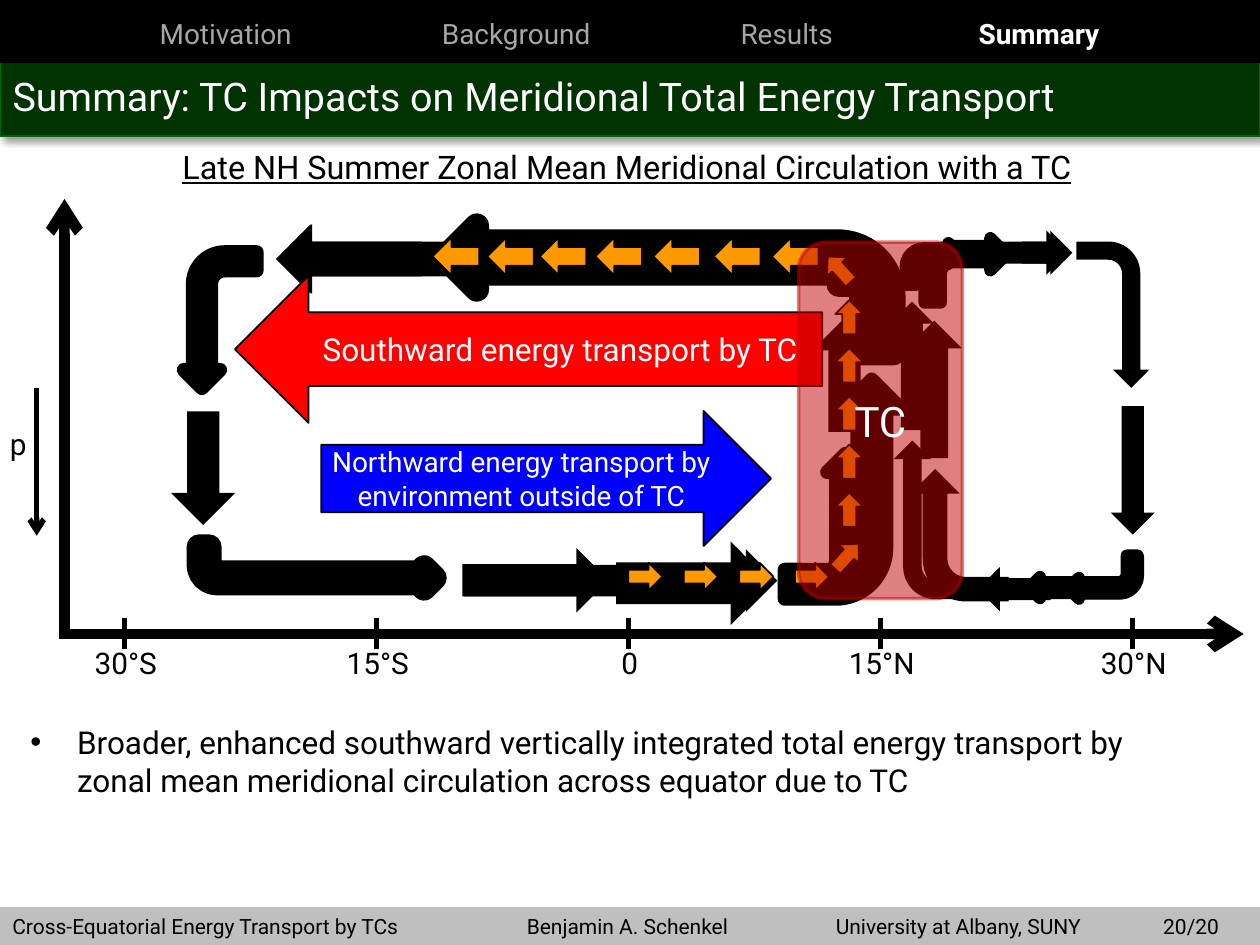
from lxml.etree import SubElement
from pptx import Presentation
from pptx.dml.color import RGBColor
from pptx.enum.shapes import MSO_CONNECTOR as Link, MSO_SHAPE as Geo
from pptx.enum.text import MSO_ANCHOR as Anchor, MSO_AUTO_SIZE as Fit, PP_ALIGN as Align
from pptx.oxml.ns import qn
from pptx.util import Cm, Pt

COLORS = {
    "black": "000000", "white": "FFFFFF", "muted": "A6A6A6", "banner": "003300",
    "banner_edge": "006600", "footer": "BFBFBF", "flux": "FF9900",
    "north": "0000FF", "south": "FF0000", "cyclone": "C00000",
}

# left, top, width, height, rotation, mirrored, outline
BENDS = [
    (17.17, 9.73, 3.2, 1.5, 270, False, 0),
    (18.26, 4.9, 1.07, 0.84, 0, False, 7),
    (20.96, 5.61, 2.95, 1.47, 90, False, 0),
    (21.54, 11.23, 1.4, 0.84, 180, False, 7),
    (15.29, 9.8, 2.77, 1.47, 90, True, 8),
    (4.01, 11.02, 4.75, 0.84, 180, True, 14),
    (10.9, 4.98, 6.2, 0.76, 0, True, 14),
    (3.07, 5.72, 2.74, 1.47, 270, True, 8),
    (14.78, 8.69, 4.42, 2.34, 90, True, 8),
    (8.97, 4.55, 9.04, 2.57, 0, True, 14),
    (18.01, 9.8, 2.67, 1.98, 270, False, 0),
    (18.64, 4.8, 1.65, 1.3, 0, False, 7),
    (20.75, 11.2, 2.18, 0.86, 180, False, 7),
]
STRAIGHTS = [
    (5.59, 4.52, 4.7, 1.4, 180), (9.35, 11.07, 6.32, 1.27, 0),
    (20.6, 4.65, 1.02, 0.89, 0), (19.71, 11.43, 1.47, 0.89, 180),
    (21.54, 9.04, 2.59, 0.89, 90), (17.09, 6.93, 2.59, 0.89, 270),
    (2.95, 8.79, 2.29, 1.3, 90), (15.88, 6.91, 2.29, 1.3, 270),
    (12.42, 10.92, 3.15, 1.68, 0), (9.32, 11.05, 2.95, 1.3, 0),
    (5.56, 4.52, 2.95, 1.4, 180), (17.45, 7.29, 2.77, 1.12, 270),
    (19.71, 4.65, 1.83, 0.89, 0),
]


def rgb(color):
    """Return the RGB value of a named colour."""
    return RGBColor.from_string(COLORS[color])


def add_run(paragraph, text, size, color="black", bold=None, underline=None):
    """Append one formatted run to a paragraph."""
    run = paragraph.add_run()
    run.text = text
    font = run.font
    font.name, font.size, font.bold, font.underline = "Roboto", Pt(size), bold, underline
    font.color.rgb = rgb(color)


def paint(shape, fill, edge=None, width=0):
    """Set the fill and outline of a shape."""
    shape.fill.solid()
    shape.fill.fore_color.rgb = rgb(fill)
    if edge:
        shape.line.color.rgb = rgb(edge)
        shape.line.width = Pt(width)
    else:
        shape.line.fill.background()


def add_figure(slide, geometry, box, fill, edge=None, width=0, turn=0, mirrored=False):
    """Add a preset shape, optionally turned and mirrored."""
    figure = slide.shapes.add_shape(geometry, *map(Cm, box))
    figure.shadow.inherit = False
    paint(figure, fill, edge, width)
    figure.rotation = turn
    if mirrored:
        figure._element.spPr.find(qn("a:xfrm")).set("flipH", "1")
    return figure


def add_label(slide, box, lines, size, color="black", align=Align.CENTER, wrap=True, **style):
    """Add a text box with one paragraph for each line."""
    frame = slide.shapes.add_textbox(*map(Cm, box)).text_frame
    frame.word_wrap = wrap
    for index, line in enumerate(lines):
        paragraph = frame.add_paragraph() if index else frame.paragraphs[0]
        paragraph.alignment = align
        add_run(paragraph, line, size, color, **style)


def add_rule(slide, start, end, width, arrow=False):
    """Add a straight black line, optionally with an arrowhead at its end."""
    rule = slide.shapes.add_connector(Link.STRAIGHT, *map(Cm, start + end))
    rule.line.color.rgb = rgb("black")
    rule.line.width = Pt(width)
    if arrow:
        SubElement(rule.line._get_or_add_ln(), qn("a:tailEnd"), type="arrow")
    SubElement(rule._element.spPr, qn("a:effectLst"))


def place(holder, box):
    """Move and size a placeholder."""
    holder.left, holder.top, holder.width, holder.height = map(Cm, box)
    holder.text_frame.auto_size = Fit.NONE
    return holder.text_frame


def set_title(title):
    """Format the green title banner with its shadow."""
    frame = place(title, (0, 1.14, 25.4, 1.6))
    frame.vertical_anchor = Anchor.MIDDLE
    frame.paragraphs[0].alignment = Align.LEFT
    add_run(frame.paragraphs[0], "Summary: TC Impacts on Meridional Total Energy Transport", 22.5, "white")
    paint(title, "banner", "banner_edge", 0.75)
    effects = SubElement(title._element.spPr, qn("a:effectLst"))
    shadow = SubElement(effects, qn("a:outerShdw"), blurRad=str(Pt(4)), dist=str(Pt(3)),
                        dir="2700000", algn="tl", rotWithShape="0")
    tint = SubElement(shadow, qn("a:srgbClr"), val=COLORS["black"])
    SubElement(tint, qn("a:alpha"), val="40000")


def set_conclusion(body):
    """Write the bulleted conclusion."""
    frame = place(body, (0.36, 14.45, 23.75, 2.74))
    frame.vertical_anchor = Anchor.TOP
    paragraph = frame.paragraphs[0]
    paragraph.space_before, paragraph.space_after = Pt(0), Pt(12)
    properties = paragraph._p.get_or_add_pPr()
    properties.set("marL", str(Cm(0.94)))
    properties.set("indent", str(-Cm(0.94)))
    SubElement(properties, qn("a:buChar"), char="•")
    add_run(paragraph, "Broader, enhanced southward vertically integrated total energy transport by "
            "zonal mean meridional circulation across equator due to TC", 18)


def add_navigation(slide):
    """Add the top bar with its section names."""
    add_figure(slide, Geo.RECTANGLE, (0, 0, 25.4, 1.27), "black")
    for section, left in (("Motivation", 2.97), ("Background", 8.66), ("Results", 14.68)):
        add_label(slide, (left, 0.2, 4.6, 0.94), [section], 16, "muted", Align.LEFT)
    add_label(slide, (19.48, 0.2, 5.44, 0.94), ["Summary"], 16, "white", Align.LEFT, bold=True)


def add_circulation(slide):
    """Draw the black overturning cells."""
    for *box, turn, mirrored, width in BENDS:
        add_figure(slide, Geo.BENT_ARROW, box, "black", "black" if width else None, width, turn, mirrored)
    for *box, turn in STRAIGHTS:
        add_figure(slide, Geo.RIGHT_ARROW, box, "black", turn=turn)


def add_axes(slide):
    """Draw the pressure and latitude axes."""
    add_rule(slide, (1.3, 12.8), (1.3, 4.01), 6, True)
    add_rule(slide, (0.74, 7.82), (0.74, 10.8), 3, True)
    add_label(slide, (-0.05, 8.46, 0.84, 0.99), ["p"], 17, wrap=False)
    add_rule(slide, (1.19, 12.78), (25.07, 12.78), 6, True)
    for index, latitude in enumerate(("30°S", "15°S", "0", "15°N", "30°N")):
        x = 2.51 + 5.08 * index
        add_rule(slide, (x, 12.45), (x, 13.08), 3)
        add_label(slide, (x - 0.9, 12.88, 1.85, 0.99), [latitude], 17, wrap=False)


def add_energy_path(slide):
    """Draw the small orange arrows along the path of the energy."""
    inflow = [(12.73 + 1.12 * step, 11.28, 270) for step in range(4)]
    ascent = [(16.84, 6.05 + 0.97 * step, 180) for step in range(5)]
    turns = [(16.79, 10.87, 222.4), (16.64, 5.08, 137.6)]
    for left, top, turn in inflow + ascent + turns:
        add_figure(slide, Geo.DOWN_ARROW, (left, top, 0.56, 0.69), "flux", "black", 1, turn)
    for left in (8.81, 9.91, 10.97, 12.09, 13.26, 14.48, 15.65):
        add_figure(slide, Geo.DOWN_ARROW, (left, 4.7, 0.76, 0.94), "flux", "black", 1, 90)


def add_transports(slide):
    """Add the two large transport arrows and their captions."""
    add_figure(slide, Geo.DOWN_ARROW, (9.65, 5.11, 2.72, 9.07), "north", "black", 1, 270)
    add_figure(slide, Geo.DOWN_ARROW, (9.17, 1.12, 2.97, 11.84), "south", "black", 1, 90)
    add_label(slide, (5.46, 6.53, 11.66, 1.02), ["Southward energy transport by TC"], 18, "white")
    add_label(slide, (5.11, 8.84, 10.8, 1.63),
              ["Northward energy transport by", "environment outside of TC"], 16, "white")


def add_cyclone(slide):
    """Add the half-transparent cyclone region."""
    cyclone = add_figure(slide, Geo.ROUNDED_RECTANGLE, (16.1, 4.88, 3.3, 7.19), "cyclone", "cyclone", 2)
    for tint in cyclone._element.spPr.iter(qn("a:srgbClr")):
        SubElement(tint, qn("a:alpha"), val="50000")
    frame = cyclone.text_frame
    frame.vertical_anchor = Anchor.MIDDLE
    frame.paragraphs[0].alignment = Align.CENTER
    add_run(frame.paragraphs[0], "TC", 24, "white")


def add_footer(slide):
    """Add the grey footer, its entries set on tab stops."""
    frame = add_figure(slide, Geo.RECTANGLE, (0, 18.29, 25.4, 0.76), "footer").text_frame
    frame.vertical_anchor = Anchor.MIDDLE
    paragraph = frame.paragraphs[0]
    paragraph.alignment = Align.LEFT
    stops = SubElement(paragraph._p.get_or_add_pPr(), qn("a:tabLst"))
    for stop in (10.37, 16.6, 23.2):
        SubElement(stops, qn("a:tab"), pos=str(Cm(stop)), algn="l")
    entries = ("Cross-Equatorial Energy Transport by TCs", "Benjamin A. Schenkel",
               "University at Albany, SUNY", "20/20")
    add_run(paragraph, "\t".join(entries), 12)


def main():
    """Build and save the summary slide."""
    deck = Presentation()
    deck.slide_width, deck.slide_height = Cm(25.4), Cm(19.05)
    slide = deck.slides.add_slide(deck.slide_layouts[1])
    set_title(slide.shapes.title)
    set_conclusion(slide.placeholders[1])
    add_navigation(slide)
    add_label(slide, (-0.13, 2.84, 25.53, 1.04),
              ["Late NH Summer Zonal Mean Meridional Circulation with a TC"], 18.5, underline=True)
    add_circulation(slide)
    add_axes(slide)
    add_energy_path(slide)
    add_transports(slide)
    add_cyclone(slide)
    add_footer(slide)
    deck.save("out.pptx")


if __name__ == "__main__":
    main()
